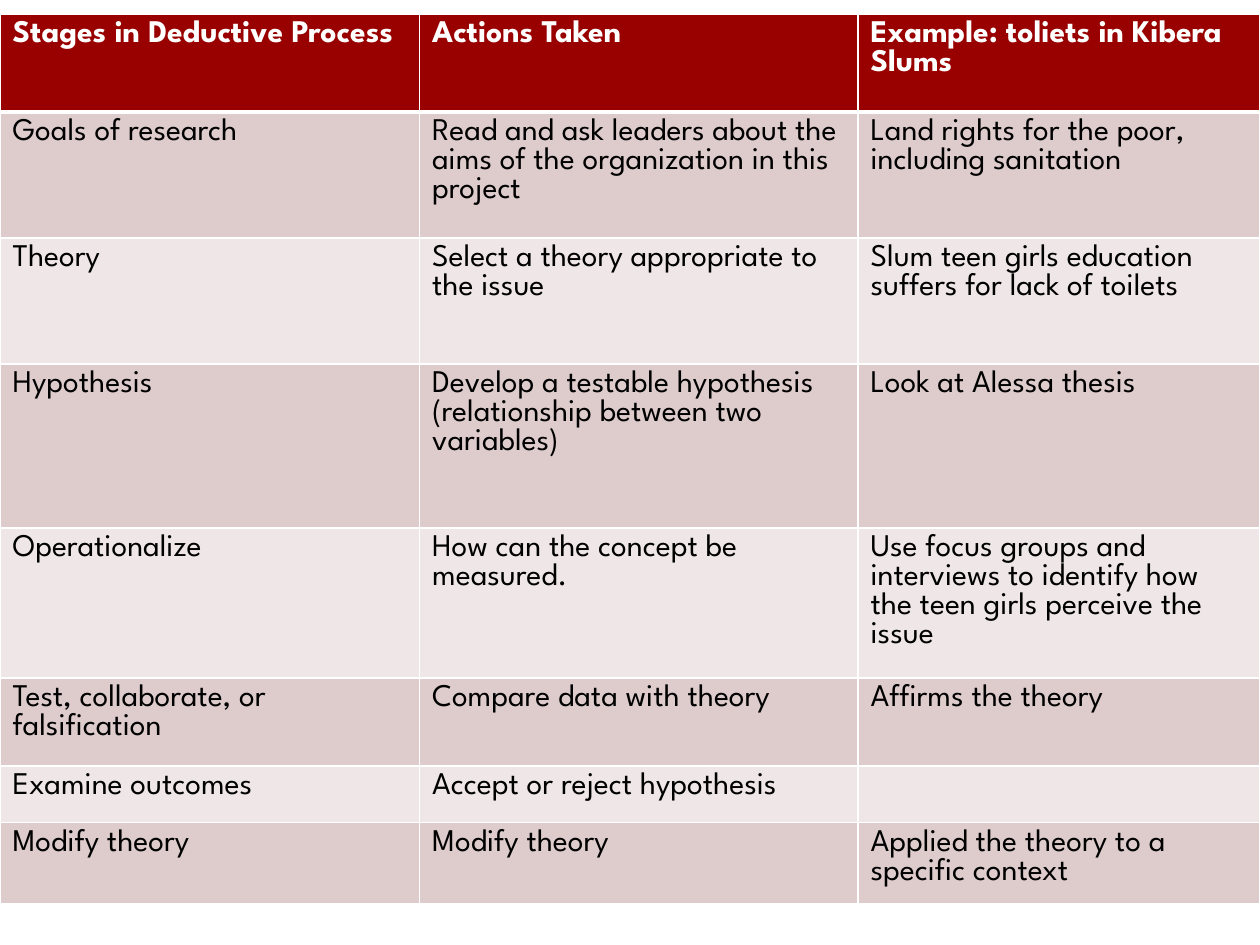
import pptx
import pptx.dml.color
import pptx.oxml
import pptx.oxml.ns
import pptx.util
from pptx.util import Inches

FONT = "League Spartan"
RED, DARK_BAND, LIGHT_BAND = "990000", "DECCCC", "EFE7E7"
WHITE, BLACK = "FFFFFF", "000000"

COLUMN_WIDTHS = [3.33, 3.48, 3.19]
ROW_HEIGHTS = [0.78, 1, 1, 1.3, 1.19, 0.7, 0.45, 0.64]
ROWS = [
    ("Stages in Deductive Process", "Actions Taken",
     "Example: toliets in Kibera Slums"),
    ("Goals of research",
     "Read and ask leaders about the aims of the organization in this project",
     "Land rights for the poor, including sanitation"),
    ("Theory", "Select a theory appropriate to the issue",
     "Slum teen girls education suffers for lack of toilets"),
    ("Hypothesis",
     "Develop a testable hypothesis (relationship between two variables)",
     "Look at Alessa thesis"),
    ("Operationalize", "How can the concept be measured.",
     "Use focus groups and interviews to identify how the teen girls "
     "perceive the issue"),
    ("Test, collaborate, or falsification", "Compare data with theory",
     "Affirms the theory"),
    ("Examine outcomes", "Accept or reject hypothesis", ""),
    ("Modify theory", "Modify theory",
     "Applied the theory to a specific context"),
]


def rgb(color):
    return pptx.dml.color.RGBColor.from_string(color)


def write_text(tf, text, size=18, color=BLACK, bold=False):
    p = tf.paragraphs[0]
    if not text:
        return
    r = p.add_run()
    r.text = text
    r.font.name = FONT
    r.font.size = pptx.util.Pt(size)
    r.font.bold = bold
    r.font.color.rgb = rgb(color)


def set_borders(cell, color, **widths):
    """Draw cell edges; widths are points by side: L, R, T, B."""
    tc_pr = cell._tc.get_or_add_tcPr()
    for i, (side, width) in enumerate(widths.items()):
        # Edges must come before the fill, in the order L, R, T, B
        tc_pr.insert(i, pptx.oxml.parse_xml(
            f'<a:ln{side} {pptx.oxml.ns.nsdecls("a")} w="{pptx.util.Pt(width)}">'
            f'<a:solidFill><a:srgbClr val="{color}"/></a:solidFill>'
            f'</a:ln{side}>'))


def add_process_table(s, left, top, width, height):
    shape = s.shapes.add_table(len(ROWS), len(COLUMN_WIDTHS),
                               left, top, width, height)
    table = shape.table
    for column, share in zip(table.columns, COLUMN_WIDTHS):
        column.width = int(width * share / sum(COLUMN_WIDTHS))
    for row, share in zip(table.rows, ROW_HEIGHTS):
        row.height = int(height * share / sum(ROW_HEIGHTS))

    for i, texts in enumerate(ROWS):
        header = i == 0
        fill = RED if header else DARK_BAND if i % 2 else LIGHT_BAND
        for j, text in enumerate(texts):
            cell = table.cell(i, j)
            cell.fill.solid()
            cell.fill.fore_color.rgb = rgb(fill)
            write_text(cell.text_frame, text, bold=header,
                       color=WHITE if header else BLACK)
            # A thicker rule parts the header from the body
            set_borders(cell, WHITE, L=1, R=1, T=3 if i == 1 else 1,
                        B=3 if header else 1)


def main():
    prs = pptx.Presentation()
    prs.slide_width, prs.slide_height = Inches(10), Inches(7.5)
    s = prs.slides.add_slide(prs.slide_layouts[6])
    s.background.fill.solid()
    s.background.fill.fore_color.rgb = rgb(WHITE)

    # Stages of the deductive process
    add_process_table(s, Inches(0), Inches(0.11),
                      Inches(sum(COLUMN_WIDTHS)), Inches(sum(ROW_HEIGHTS)))
    prs.save("out.pptx")


if __name__ == "__main__":
    main()
